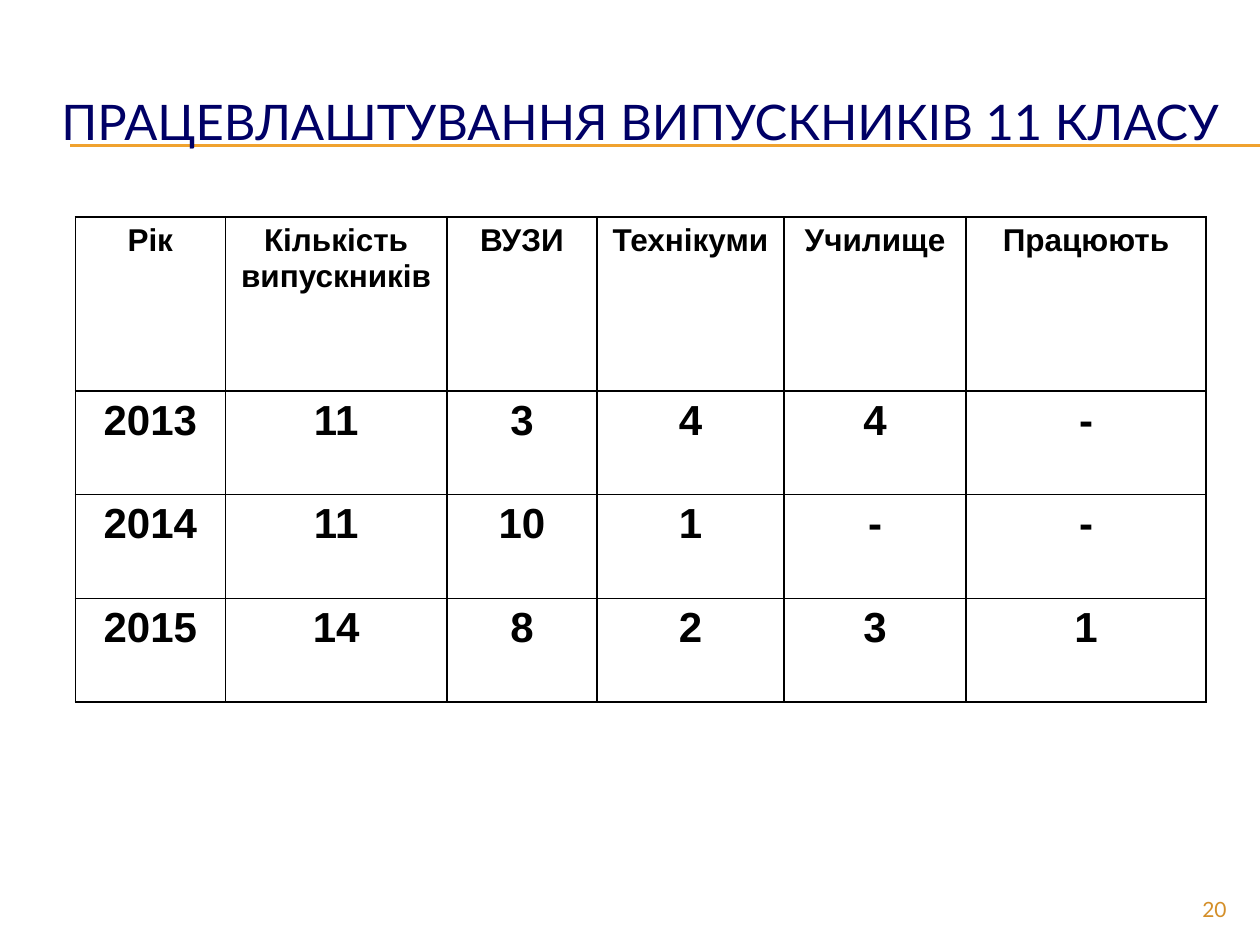
import pptx
import pptx.dml.color
import pptx.enum.shapes
import pptx.enum.text
import pptx.oxml
import pptx.oxml.ns
import pptx.util
from dataclasses import dataclass

Pt = pptx.util.Pt
RGB = pptx.dml.color.RGBColor.from_string
ALIGN = pptx.enum.text.PP_ALIGN
MIDDLE = pptx.enum.text.MSO_ANCHOR.MIDDLE
NS = pptx.oxml.ns.nsdecls("a")


@dataclass(frozen=True)
class Theme:
    heading_font: str = "Lato"
    table_font: str = "Arial"
    title_color: str = "000066"
    rule_color: str = "F0A22E"
    number_color: str = "D48F29"
    ink: str = "000000"
    title_size: float = 28
    header_size: float = 18
    body_size: float = 24
    number_size: float = 12
    rule_width: float = 0.75
    border_width: float = 1


class SlideBuilder:
    def __init__(self, slide, theme):
        self.s = slide
        self.theme = theme

    def fill_text(self, tf, text, align, color, **font):
        for i, line in enumerate(text.split("\n")):
            p = tf.paragraphs[0] if i == 0 else tf.add_paragraph()
            p.alignment = align
            r = p.add_run()
            r.text = line
            for name, value in font.items():
                setattr(r.font, name, value)
            r.font.color.rgb = RGB(color)

    def text(self, box, text, align, color, inset=(7.2, 3.6), **font):
        tf = self.s.shapes.add_textbox(*map(Pt, box)).text_frame
        x, y = map(Pt, inset)
        frame = dict(word_wrap=True, vertical_anchor=MIDDLE, margin_left=x,
                     margin_right=x, margin_top=y, margin_bottom=y)
        for name, value in frame.items():
            setattr(tf, name, value)
        self.fill_text(tf, text, align, color, **font)

    def rule(self, left, right, y):
        sp = self.s.shapes.add_connector(
            pptx.enum.shapes.MSO_CONNECTOR.STRAIGHT, Pt(left), Pt(y), Pt(right), Pt(y))
        sp.line.color.rgb = RGB(self.theme.rule_color)
        sp.line.width = Pt(self.theme.rule_width)
        sp._element.spPr.append(pptx.oxml.parse_xml(f"<a:effectLst {NS}/>"))

    def borders(self, cell):
        tc_pr = cell._tc.get_or_add_tcPr()
        for i, side in enumerate(("lnL", "lnR", "lnT", "lnB")):
            tc_pr.insert(i, pptx.oxml.parse_xml(
                f'<a:{side} {NS} w="{Pt(self.theme.border_width)}">'
                f'<a:solidFill><a:srgbClr val="{self.theme.ink}"/></a:solidFill></a:{side}>'))

    def table(self, left, top, widths, heights, rows):
        table = self.s.shapes.add_table(
            len(rows), len(widths), Pt(left), Pt(top),
            Pt(sum(widths)), Pt(sum(heights))).table
        table.first_row = table.horz_banding = False
        for column, width in zip(table.columns, widths):
            column.width = Pt(width)
        for i, (row, height) in enumerate(zip(rows, heights)):
            table.rows[i].height = Pt(height)
            size = self.theme.body_size if i else self.theme.header_size
            for j, value in enumerate(row):
                cell = table.cell(i, j)
                cell.fill.background()
                self.borders(cell)
                self.fill_text(cell.text_frame, value, ALIGN.CENTER, self.theme.ink,
                               name=self.theme.table_font, size=Pt(size), bold=True)


def main():
    prs = pptx.Presentation()
    prs.slide_width, prs.slide_height = Pt(720), Pt(540)
    theme = Theme()
    s = SlideBuilder(prs.slides.add_slide(prs.slide_layouts[6]), theme)

    for y in (82.8, 83.4):
        s.rule(40.3, 720, y)
    s.text((23.8, 36, 684, 66.2), "ПРАЦЕВЛАШТУВАННЯ ВИПУСКНИКІВ 11 КЛАСУ",
           ALIGN.CENTER, theme.title_color, inset=(0, 0),
           name=theme.heading_font, size=Pt(theme.title_size))
    s.table(43, 124, (85.8, 126.6, 85.8, 106.8, 104.2, 137), (99.4, 59.3, 59.3, 59.3), (
        ("Рік", "Кількість\nвипускників", "ВУЗИ", "Технікуми", "Училище", "Працюють"),
        ("2013", "11", "3", "4", "4", "-"),
        ("2014", "11", "10", "1", "-", "-"),
        ("2015", "14", "8", "2", "3", "1"),
    ))
    s.text((648, 510, 60, 19.4), "20", ALIGN.RIGHT, theme.number_color,
           name=theme.heading_font, size=Pt(theme.number_size))
    prs.save("out.pptx")


if __name__ == "__main__":
    main()
